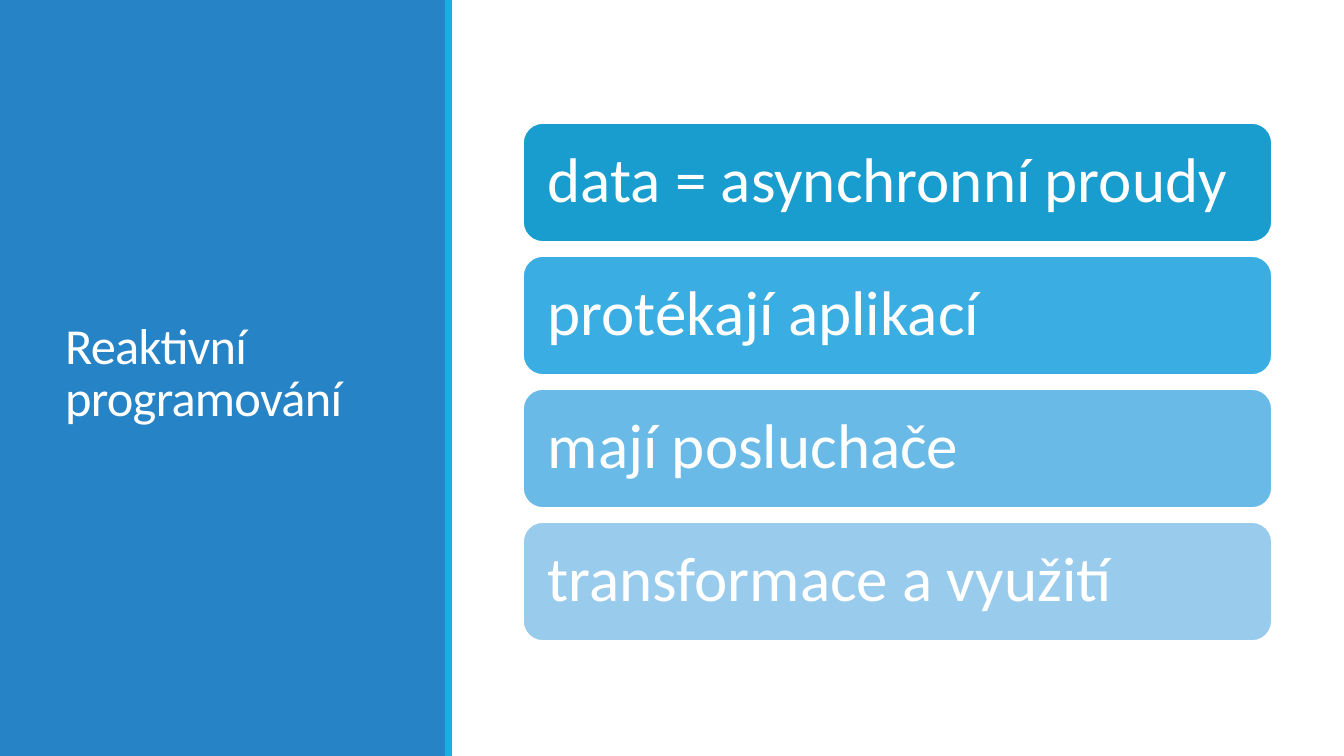
from pptx import Presentation
from pptx.dml.color import RGBColor
from pptx.enum.shapes import MSO_SHAPE as Shape
from pptx.enum.text import MSO_ANCHOR as Anchor, MSO_AUTO_SIZE as AutoSize, PP_ALIGN as Align
from pptx.util import Emu, Pt

EMU_PER_PX = 914400 / 100.8
SLIDE_WIDTH, SLIDE_HEIGHT = 1344, 756

WHITE = RGBColor(0xFF, 0xFF, 0xFF)
PANEL_BLUE = RGBColor(0x26, 0x83, 0xC6)
STRIPE_BLUE = RGBColor(0x1C, 0xAD, 0xE4)

PRINCIPLES = [
    ("data = asynchronní proudy", RGBColor(0x19, 0x9D, 0xCF)),
    ("protékají aplikací", RGBColor(0x3A, 0xAD, 0xE3)),
    ("mají posluchače", RGBColor(0x6A, 0xBA, 0xE7)),
    ("transformace a využití", RGBColor(0x99, 0xCB, 0xEC)),
]
CARD_TOP, CARD_HEIGHT, CARD_PITCH = 123, 119, 133


def px(length):
    return Emu(round(length * EMU_PER_PX))


class SlideBuilder:
    font_name = "Calibri"
    text_color = WHITE

    def __init__(self, slide):
        self.slide = slide

    def set_text(self, frame, text, size, line_spacing):
        frame.word_wrap = True
        frame.auto_size = AutoSize.NONE
        frame.vertical_anchor = Anchor.MIDDLE
        paragraph = frame.paragraphs[0]
        paragraph.text = text
        paragraph.alignment = Align.LEFT
        paragraph.line_spacing = line_spacing
        paragraph.font.name = self.font_name
        paragraph.font.size = Pt(size)
        paragraph.font.color.rgb = self.text_color
        return paragraph

    def block(self, preset, left, top, width, height, fill):
        block = self.slide.shapes.add_shape(preset, px(left), px(top), px(width), px(height))
        block.shadow.inherit = False
        block.fill.solid()
        block.fill.fore_color.rgb = fill
        block.line.fill.background()
        return block

    def card(self, left, top, width, height, fill, text):
        card = self.block(Shape.ROUNDED_RECTANGLE, left, top, width, height, fill)
        card.line.color.rgb = WHITE
        card.line.width = Pt(1.25)
        frame = card.text_frame
        # The rounded preset already insets its text area by about 6 px.
        frame.margin_left = frame.margin_right = px(19)
        frame.margin_top = frame.margin_bottom = 0
        self.set_text(frame, text, 45, 0.9)

    def title(self, left, top, width, height, text):
        title = self.slide.shapes.title
        title.left, title.top = px(left), px(top)
        title.width, title.height = px(width), px(height)
        heading = self.set_text(title.text_frame, text, 36, 0.85)
        heading.runs[0]._r.get_or_add_rPr().set("spc", "-50")
        # Bring the title in front of the side panel.
        title._element.getparent().append(title._element)


def main():
    deck = Presentation()
    deck.slide_width, deck.slide_height = px(SLIDE_WIDTH), px(SLIDE_HEIGHT)
    builder = SlideBuilder(deck.slides.add_slide(deck.slide_layouts[5]))

    builder.block(Shape.RECTANGLE, 0, 0, 447, SLIDE_HEIGHT, PANEL_BLUE)
    builder.block(Shape.RECTANGLE, 445, 0, 7, SLIDE_HEIGHT, STRIPE_BLUE)
    builder.title(55, 57, 340, 636, "Reaktivní programování")

    for index, (principle, fill) in enumerate(PRINCIPLES):
        builder.card(523, CARD_TOP + index * CARD_PITCH, 749, CARD_HEIGHT, fill, principle)

    deck.save("out.pptx")


if __name__ == "__main__":
    main()
